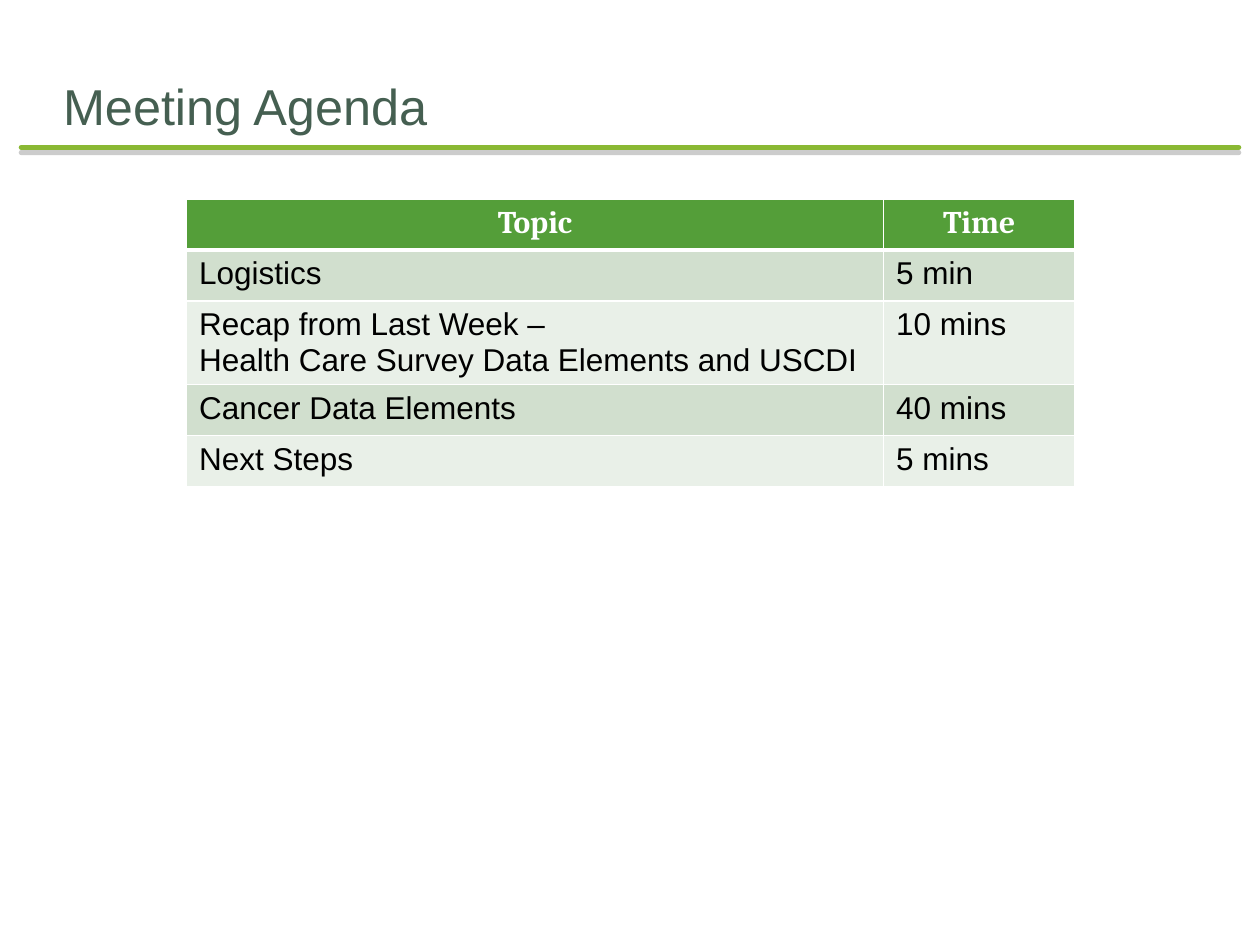
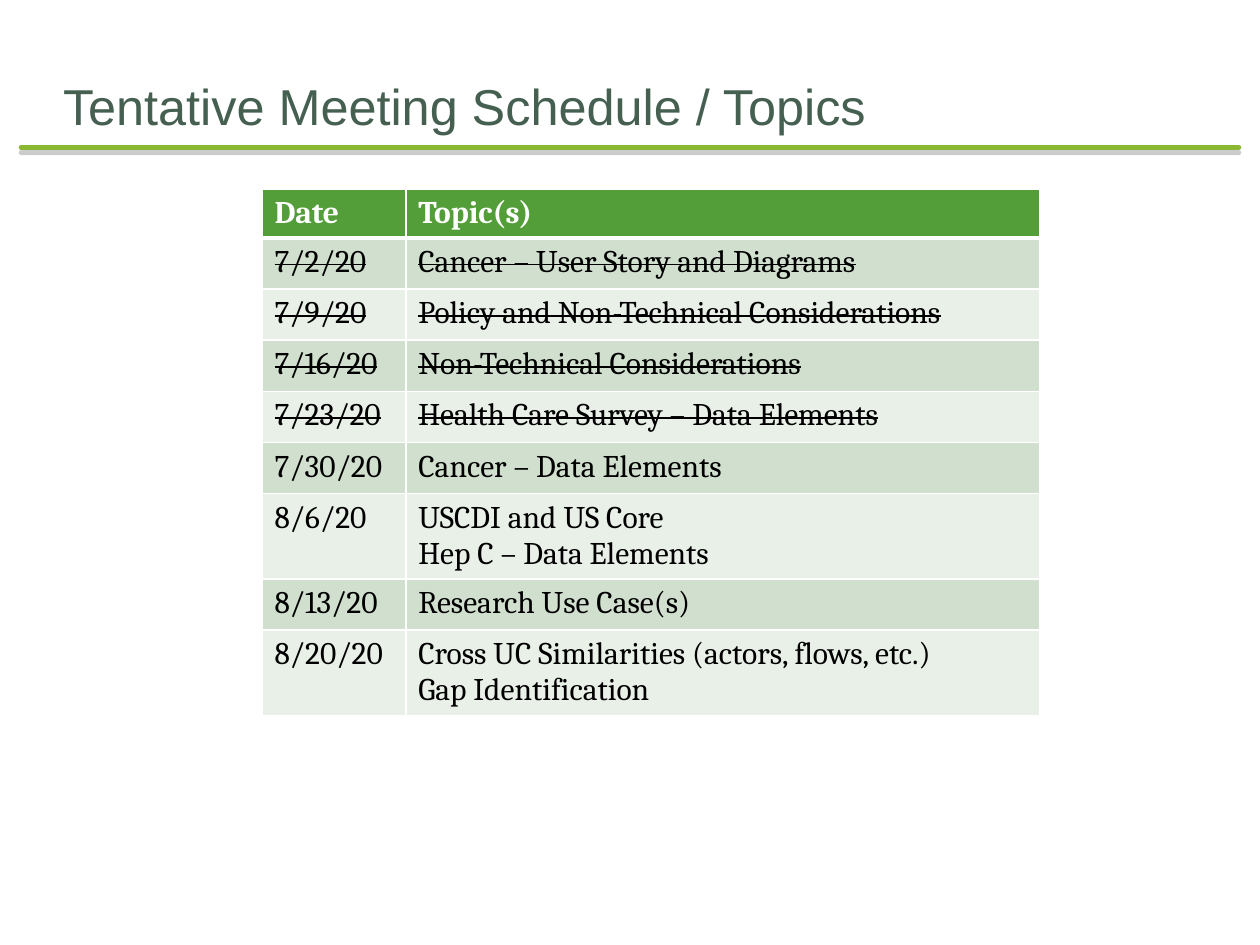
from dataclasses import dataclass

import pptx
import pptx.dml.color
import pptx.enum.shapes
import pptx.enum.text
import pptx.oxml
import pptx.oxml.ns
import pptx.util

Cm = pptx.util.Cm
Pt = pptx.util.Pt
ALIGN = pptx.enum.text.PP_ALIGN


@dataclass(frozen=True)
class Theme:
    title_color: str = "455F51"
    rule_color: str = "8AB833"
    shadow_color: str = "808080"
    header_fill: str = "549E39"
    header_text: str = "FFFFFF"
    body_text: str = "000000"
    border: str = "FFFFFF"
    bands: tuple = ("D1DFCE", "E9F0E8")
    sans: str = "Arial"
    serif: str = "Cambria"
    title_size: float = 28.8
    table_size: float = 18
    rule_width: float = 3
    border_width: float = 1
    header_border_width: float = 3


THEME = Theme()
ROW_HEIGHT = Cm(1.03)

AGENDA = [
    ("Topic", "Time"),
    ("Logistics", "5 min"),
    ("Recap from Last Week –\nHealth Care Survey Data Elements and USCDI", "10 mins"),
    ("Cancer Data Elements", "40 mins"),
    ("Next Steps", "5 mins"),
]

SCHEDULE = [
    ("Date", "Topic(s)"),
    ("7/2/20", "Cancer – User Story and Diagrams"),
    ("7/9/20", "Policy and Non-Technical Considerations"),
    ("7/16/20", "Non-Technical Considerations"),
    ("7/23/20", "Health Care Survey – Data Elements"),
    ("7/30/20", "Cancer – Data Elements"),
    ("8/6/20", "USCDI and US Core\nHep C – Data Elements"),
    ("8/13/20", "Research Use Case(s)"),
    ("8/20/20", "Cross UC Similarities (actors, flows, etc.)\nGap Identification"),
]
MEETINGS_HELD = 4


def rgb(color):
    return pptx.dml.color.RGBColor.from_string(color)


def parse_drawing(xml):
    """Parse one DrawingML element, adding the namespace to its root tag."""
    tag, rest = xml.split(" ", 1)
    return pptx.oxml.parse_xml(f'{tag} {pptx.oxml.ns.nsdecls("a")} {rest}')


def style_font(font, name, size, color, bold=False):
    font.name = name
    font.size = Pt(size)
    font.bold = bold
    font.color.rgb = rgb(color)


def add_title_rule(slide):
    y = Cm(2.97)
    line = slide.shapes.add_connector(
        pptx.enum.shapes.MSO_CONNECTOR.STRAIGHT, Cm(0.43), y, Cm(24.97), y)
    line.line.color.rgb = rgb(THEME.rule_color)
    line.line.width = Pt(THEME.rule_width)
    line.line._get_or_add_ln().set("cap", "rnd")
    line._element.spPr.append(parse_drawing(
        f'<a:effectLst ><a:outerShdw blurRad="0" dist="{Pt(3)}" dir="5400000" '
        f'rotWithShape="0"><a:srgbClr val="{THEME.shadow_color}">'
        '<a:alpha val="40000"/></a:srgbClr></a:outerShdw></a:effectLst>'))


def add_titled_slide(prs, text):
    slide = prs.slides.add_slide(prs.slide_layouts[5])
    add_title_rule(slide)
    title = slide.shapes.title
    title.left, title.top, title.width, title.height = (
        Cm(1.27), Cm(1.27), Cm(22.86), Cm(1.47))
    tf = title.text_frame
    tf.text = text
    tf.word_wrap = True
    tf.auto_size = pptx.enum.text.MSO_AUTO_SIZE.NONE
    tf.vertical_anchor = pptx.enum.text.MSO_ANCHOR.BOTTOM
    tf.margin_left = tf.margin_right = tf.margin_bottom = 0
    tf.margin_top = Cm(0.13)
    p = tf.paragraphs[0]
    p.alignment = ALIGN.LEFT
    style_font(p.font, THEME.sans, THEME.title_size, THEME.title_color)
    return slide


def set_borders(cell, top, bottom):
    """Draw all four cell borders; call before filling, as the schema orders them."""
    side = THEME.border_width
    tc_pr = cell._tc.get_or_add_tcPr()
    for edge, width in (("L", side), ("R", side), ("T", top), ("B", bottom)):
        tc_pr.append(parse_drawing(
            f'<a:ln{edge} w="{Pt(width)}"><a:solidFill>'
            f'<a:srgbClr val="{THEME.border}"/></a:solidFill></a:ln{edge}>'))


def strike_through(p):
    p.font  # creates the paragraph's default run properties
    p._p.pPr.find(pptx.oxml.ns.qn("a:defRPr")).set("strike", "sngStrike")


def fill_cell(cell, text, fill, font, color, bold, align):
    cell.text = text
    cell.fill.solid()
    cell.fill.fore_color.rgb = rgb(fill)
    for p in cell.text_frame.paragraphs:
        p.alignment = align
        style_font(p.font, font, THEME.table_size, color, bold)


def add_banded_table(slide, rows, left, top, widths, body_font,
                     header_align=ALIGN.LEFT, header_height=ROW_HEIGHT, struck=0):
    """Add a table with a header row; the first `struck` body rows are crossed out."""
    height = header_height + ROW_HEIGHT * (len(rows) - 1)
    table = slide.shapes.add_table(
        len(rows), len(widths), left, top, sum(widths), height).table
    table.horz_banding = False
    for column, width in zip(table.columns, widths):
        column.width = width
    thin, thick = THEME.border_width, THEME.header_border_width
    for i, texts in enumerate(rows):
        table.rows[i].height = ROW_HEIGHT if i else header_height
        for j, text in enumerate(texts):
            cell = table.cell(i, j)
            set_borders(cell, top=thick if i == 1 else thin,
                        bottom=thin if i else thick)
            if i == 0:
                fill_cell(cell, text, THEME.header_fill, THEME.serif,
                          THEME.header_text, True, header_align)
            else:
                fill_cell(cell, text, THEME.bands[(i - 1) % 2], body_font,
                          THEME.body_text, False, ALIGN.LEFT)
            if 1 <= i <= struck:
                for p in cell.text_frame.paragraphs:
                    strike_through(p)


def main():
    prs = pptx.Presentation()
    prs.slide_width, prs.slide_height = Cm(25.4), Cm(19.05)

    agenda = add_titled_slide(prs, "Meeting Agenda")
    add_banded_table(agenda, AGENDA, Cm(3.76), Cm(4.01), (Cm(14.05), Cm(3.86)),
                     THEME.sans, header_align=ALIGN.CENTER)

    schedule = add_titled_slide(prs, "Tentative Meeting Schedule / Topics")
    add_banded_table(schedule, SCHEDULE, Cm(5.28), Cm(3.81), (Cm(2.9), Cm(12.78)),
                     THEME.serif, header_height=Cm(0.41), struck=MEETINGS_HELD)

    prs.save("out.pptx")


if __name__ == "__main__":
    main()
